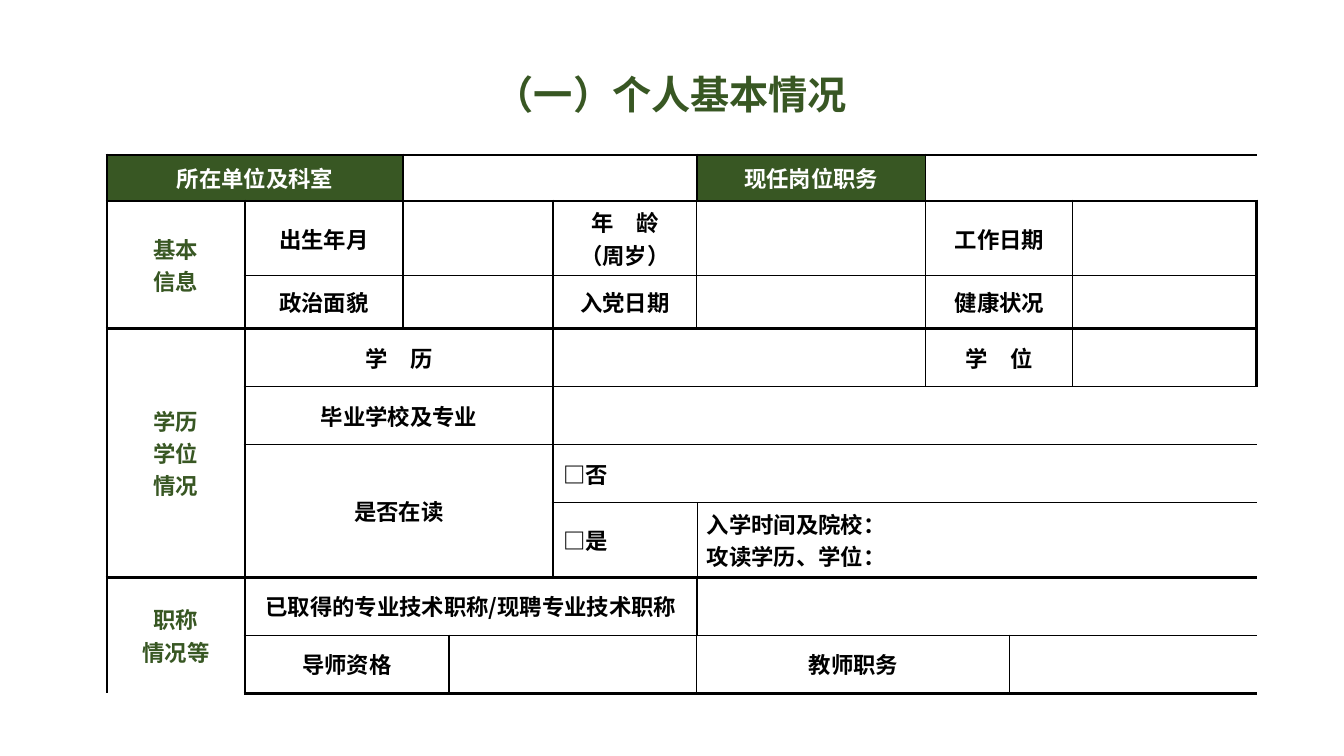
from lxml import etree
from pptx import Presentation
from pptx.dml.color import RGBColor
from pptx.enum.text import MSO_ANCHOR, PP_ALIGN
from pptx.oxml.ns import qn
from pptx.util import Emu, Pt

FONT = "Noto Sans CJK SC"
GREEN = RGBColor(0x38, 0x57, 0x23)
WHITE = RGBColor(0xFF, 0xFF, 0xFF)
BLACK = RGBColor(0x00, 0x00, 0x00)

EMU_PER_PX = 914400 / 100.8
SLIDE_SIZE = (1344, 756)
TITLE = "（一）个人基本情况"
TITLE_BOX = (136, 36, 1070, 86)
FORM_ORIGIN = (107, 155)
COLUMN_WIDTHS = [138, 158, 46, 104, 144, 229, 84, 63, 184]
ROW_HEIGHTS = [46, 58, 53, 58, 58, 58, 58, 58, 58]

# role, row, column, rows spanned, columns spanned, text
FIELDS = [
    ("header", 0, 0, 1, 2, "所在单位及科室"),
    ("label", 0, 2, 1, 3, ""),
    ("header", 0, 5, 1, 1, "现任岗位职务"),
    ("label", 0, 6, 1, 3, ""),
    ("section", 1, 0, 2, 1, "基本\n信息"),
    ("label", 1, 1, 1, 1, "出生年月"),
    ("label", 1, 2, 1, 2, ""),
    ("label", 1, 4, 1, 1, "年　龄\n（周岁）"),
    ("label", 1, 5, 1, 1, ""),
    ("label", 1, 6, 1, 2, "工作日期"),
    ("label", 1, 8, 1, 1, ""),
    ("label", 2, 1, 1, 1, "政治面貌"),
    ("label", 2, 2, 1, 2, ""),
    ("label", 2, 4, 1, 1, "入党日期"),
    ("label", 2, 5, 1, 1, ""),
    ("label", 2, 6, 1, 2, "健康状况"),
    ("label", 2, 8, 1, 1, ""),
    ("section", 3, 0, 4, 1, "学历\n学位\n情况"),
    ("label", 3, 1, 1, 3, "学　历"),
    ("label", 3, 4, 1, 2, ""),
    ("label", 3, 6, 1, 2, "学　位"),
    ("label", 3, 8, 1, 1, ""),
    ("label", 4, 1, 1, 3, "毕业学校及专业"),
    ("label", 4, 4, 1, 5, ""),
    ("label", 5, 1, 2, 3, "是否在读"),
    ("choice", 5, 4, 1, 5, "□否"),
    ("choice", 6, 4, 1, 1, "□是"),
    ("choice", 6, 5, 1, 4, "入学时间及院校：\n攻读学历、学位："),
    ("section", 7, 0, 2, 1, "职称\n情况等"),
    ("label", 7, 1, 1, 4, "已取得的专业技术职称/现聘专业技术职称"),
    ("label", 7, 5, 1, 4, ""),
    ("label", 8, 1, 1, 2, "导师资格"),
    ("label", 8, 3, 1, 2, ""),
    ("label", 8, 5, 1, 2, "教师职务"),
    ("label", 8, 7, 1, 2, ""),
]
# role: fill, text colour, alignment
ROLES = {
    "header": (GREEN, WHITE, PP_ALIGN.CENTER),
    "section": (WHITE, GREEN, PP_ALIGN.CENTER),
    "label": (WHITE, BLACK, PP_ALIGN.CENTER),
    "choice": (WHITE, BLACK, PP_ALIGN.LEFT),
}
THICK, THIN, FINE = 2.25, 1, 0.5
SECTION_EDGES = {0, 1, 3, 7, 9}
STUDY_EDGES = {5, 6}
FRAME_EDGES = {0, 1, 9}
NO_STYLE_NO_GRID = "{2D5ABB26-0587-4C30-8999-92F81FD0307C}"


def px(length):
    return Emu(round(length * EMU_PER_PX))


def horizontal_weight(edge):
    if edge in SECTION_EDGES:
        return THICK
    return FINE if edge in STUDY_EDGES else THIN


def vertical_weight(row, edge):
    if edge in FRAME_EDGES or (row, edge) == (0, 5):
        return THICK
    return FINE if (row, edge) == (6, 5) else THIN


def format_text(frame, size, color, alignment):
    for paragraph in frame.paragraphs:
        paragraph.alignment = alignment
        for run in paragraph.runs:
            run.font.size = Pt(size)
            run.font.bold = True
            run.font.color.rgb = color
            run.font.name = FONT
            east_asian = etree.SubElement(run.font._element, qn("a:ea"))
            east_asian.set("typeface", FONT)


def add_border(cell, side, weight):
    line = etree.SubElement(cell._tc.get_or_add_tcPr(), qn(f"a:ln{side}"), w=str(Pt(weight)))
    fill = etree.SubElement(line, qn("a:solidFill"))
    etree.SubElement(fill, qn("a:srgbClr"), val=str(BLACK))


def draw_outline(table, top, left, bottom, right):
    """Border the outer sides of a block of cells, leaving its inside open."""
    for row in range(top, bottom):
        for column in range(left, right):
            cell = table.cell(row, column)
            if column == left:
                add_border(cell, "L", vertical_weight(top, left))
            if column == right - 1:
                add_border(cell, "R", vertical_weight(top, right))
            if row == top:
                add_border(cell, "T", horizontal_weight(top))
            if row == bottom - 1:
                add_border(cell, "B", horizontal_weight(bottom))


def add_title(slide):
    title = slide.shapes.title
    title.left, title.top, title.width, title.height = map(px, TITLE_BOX)
    title.text_frame.text = TITLE
    title.text_frame.vertical_anchor = MSO_ANCHOR.BOTTOM
    format_text(title.text_frame, 28, GREEN, PP_ALIGN.CENTER)


def add_form(slide):
    size = (sum(COLUMN_WIDTHS), sum(ROW_HEIGHTS))
    table = slide.shapes.add_table(
        len(ROW_HEIGHTS), len(COLUMN_WIDTHS), *map(px, FORM_ORIGIN + size)
    ).table
    table.first_row = table.horz_banding = False
    table._tbl.tblPr.find(qn("a:tableStyleId")).text = NO_STYLE_NO_GRID
    for column, width in zip(table.columns, COLUMN_WIDTHS):
        column.width = px(width)
    for row, height in zip(table.rows, ROW_HEIGHTS):
        row.height = px(height)

    for role, top, left, row_span, column_span, text in FIELDS:
        fill, color, alignment = ROLES[role]
        bottom, right = top + row_span, left + column_span
        field = table.cell(top, left)
        if row_span * column_span > 1:
            field.merge(table.cell(bottom - 1, right - 1))
        draw_outline(table, top, left, bottom, right)
        field.fill.solid()
        field.fill.fore_color.rgb = fill
        field.vertical_anchor = MSO_ANCHOR.MIDDLE
        if text:
            field.text_frame.text = text
            format_text(field.text_frame, 16, color, alignment)


def main():
    deck = Presentation()
    deck.slide_width, deck.slide_height = map(px, SLIDE_SIZE)
    slide = deck.slides.add_slide(deck.slide_layouts[5])
    add_form(slide)
    add_title(slide)
    deck.save("out.pptx")


if __name__ == "__main__":
    main()
